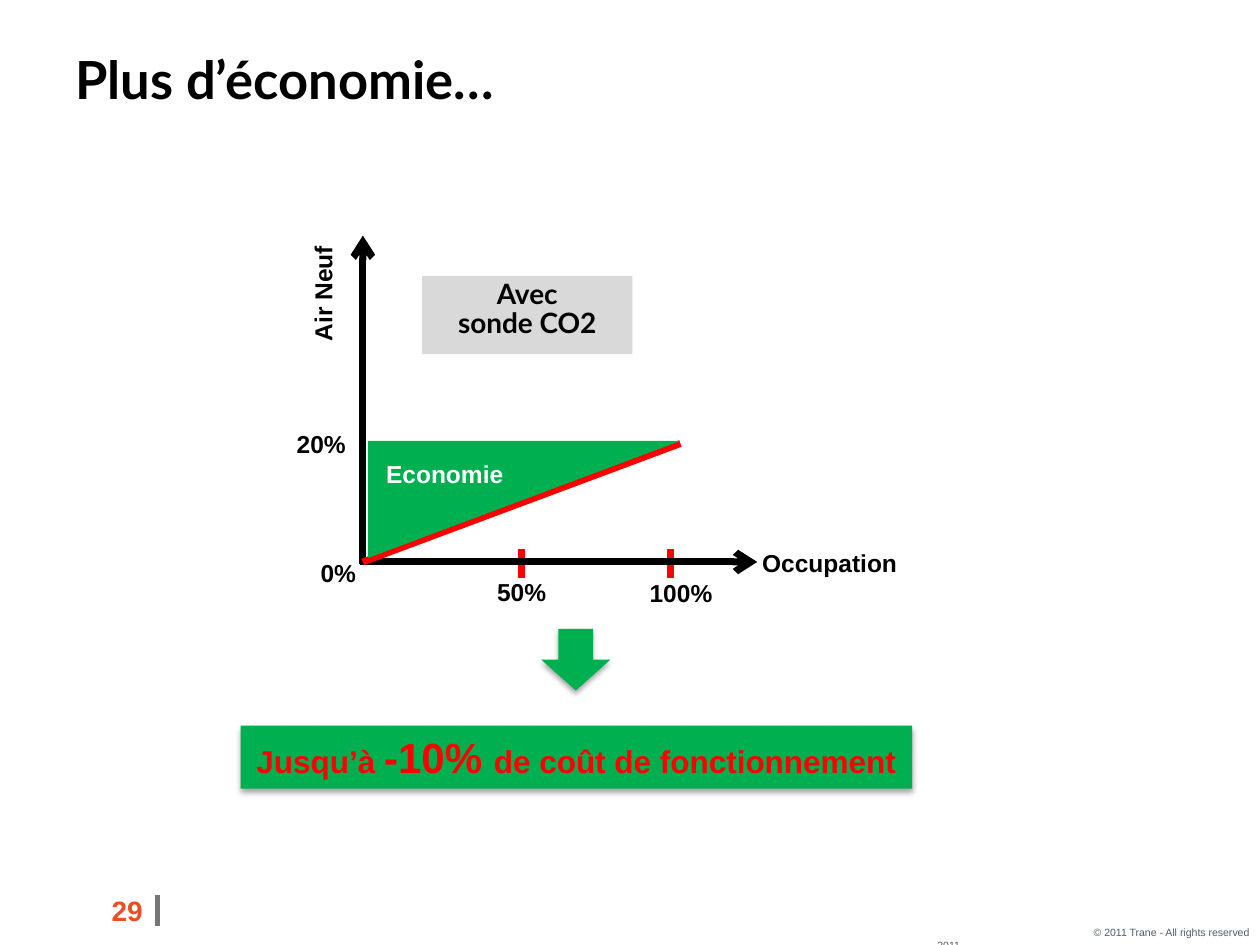
from lxml import etree
from pptx import Presentation, oxml
from pptx import util as u
from pptx.dml import color
from pptx.enum import shapes, text
from pptx.oxml import ns

COLORS = {
    "ink": "000000", "white": "FFFFFF", "green": "00B050", "red": "FF0000",
    "gray": "D9D9D9", "orange": "EF4E23", "bar": "747678", "slate": "4F5C69",
}
LEFT, MID, RIGHT = text.PP_ALIGN.LEFT, text.PP_ALIGN.CENTER, text.PP_ALIGN.RIGHT
SHADOW = (
    f'<a:effectLst {ns.nsdecls("a")}>'
    '<a:outerShdw blurRad="40000" dist="23000" dir="5400000" rotWithShape="0">'
    '<a:srgbClr val="000000"><a:alpha val="35000"/></a:srgbClr>'
    '</a:outerShdw></a:effectLst>'
)


def rgb(name):
    return color.RGBColor.from_string(COLORS[name])


def place(box):
    return [u.Inches(v) for v in box]


def style(font, size, hue, bold=True, face="Arial"):
    font.name, font.size, font.bold = face, u.Pt(size), bold
    font.color.rgb = rgb(hue)


def write(shape, lines, size, hue="ink", align=MID, bold=True, face="Arial",
          gap=None, wrap=True, inset=None):
    frame = shape.text_frame
    frame.word_wrap = wrap
    frame.vertical_anchor = text.MSO_ANCHOR.TOP
    if inset is not None:
        frame.margin_left = frame.margin_right = u.Inches(inset)
        frame.margin_top = frame.margin_bottom = u.Inches(inset)
    for i, line in enumerate(lines):
        para = frame.add_paragraph() if i else frame.paragraphs[0]
        para.text, para.alignment = line, align
        if gap:
            para.line_spacing = gap
        style(para.font, size, hue, bold, face)
    return shape


def label(slide, box, words, size=14, **look):
    return write(slide.shapes.add_textbox(*place(box)), [words], size, **look)


def fill(slide, kind, box, hue, shadow=False):
    shape = slide.shapes.add_shape(kind, *place(box))
    shape.fill.solid()
    shape.fill.fore_color.rgb = rgb(hue)
    shape.line.fill.background()
    shape.shadow.inherit = False
    if shadow:
        props = shape._element.spPr
        props.remove(props.find(ns.qn("a:effectLst")))
        props.append(oxml.parse_xml(SHADOW))
    return shape


def draw(slide, ends, hue, width=4, arrow=False):
    line = slide.shapes.add_connector(shapes.MSO_CONNECTOR.STRAIGHT, *place(ends))
    line.line.color.rgb = rgb(hue)
    line.line.width = u.Pt(width)
    if arrow:
        etree.SubElement(line.line._get_or_add_ln(), ns.qn("a:tailEnd"), type="arrow")
    etree.SubElement(line._element.spPr, ns.qn("a:effectLst"))


def add_title(slide, box):
    label(slide, box, "Plus d’économie…", 30, align=LEFT, face="Lato", gap=0.85)


def add_graph(slide, box):
    x, y, w, h = box
    base = y + h

    # Axes and ticks
    for tick in (2.44, 1.26):
        draw(slide, (x + tick, base - 0.1, x + tick, base + 0.13), "red")
    draw(slide, (x - 0.02, base, x + w, base), "ink", arrow=True)
    draw(slide, (x, base + 0.02, x, y), "ink", arrow=True)

    # Axis names and values
    name = label(slide, (x - 1.1, y + 0.29, 1.57, 0.34), "Air Neuf")
    name.rotation = 270
    for dx, dy, wide, words in (
        (2.92, -0.16, 1.57, "Occupation"),
        (-0.47, -0.08, 0.55, "0%"),
        (0.95, 0.07, 0.62, "50%"),
        (2.13, 0.08, 0.79, "100%"),
        (-0.64, -1.1, 0.62, "20%"),
    ):
        label(slide, (x + dx, base + dy, wide, 0.34), words)

    # Fresh air line and savings area
    draw(slide, (x, base, x + 2.52, base - 0.94), "red")
    area = fill(slide, shapes.MSO_SHAPE.ISOSCELES_TRIANGLE,
                (x + 0.04, base - 0.96, 2.48, 0.93), "green")
    area.adjustments[0] = 0
    area._element.spPr.xfrm.set("flipV", "1")
    label(slide, (x + 0.08, base - 0.87, 1.14, 0.34), "Economie",
          hue="white", wrap=False)

    # Caption
    card = fill(slide, shapes.MSO_SHAPE.RECTANGLE,
                (x + 0.47, y + 0.32, 1.67, 0.62), "gray")
    write(card, ["Avec", "sonde CO2"], 16, face="Lato", gap=0.85)


def add_result(slide, box):
    x, y, w, h = box
    bar = fill(slide, shapes.MSO_SHAPE.RECTANGLE, (x, y + h - 0.5, w, 0.5),
               "green", shadow=True)
    write(bar, [""], 18, hue="red", wrap=False)
    para = bar.text_frame.paragraphs[0]
    for words, size in (("Jusqu’à ", 18), ("-10% ", 24),
                        ("de coût de fonctionnement", 18)):
        run = para.add_run()
        run.text = words
        style(run.font, size, "red")
    fill(slide, shapes.MSO_SHAPE.DOWN_ARROW, (x + w / 2 - 0.28, y, 0.55, 0.49),
         "green", shadow=True)


def add_footer(slide, box):
    x, y, w, h = box
    label(slide, (x, y, 0.77, 0.37), "29", 16, hue="orange", align=RIGHT)
    draw(slide, (x + 0.79, y + 0.06, x + 0.79, y + 0.31), "bar", 3)
    small = {"hue": "slate", "align": LEFT, "bold": False, "wrap": False, "inset": 0}
    label(slide, (x + 8.22, y + 0.31, 1.28, 0.1),
          "© 2011 Trane - All rights reserved", 6, **small)
    label(slide, (x + 6.98, y + 0.41, 0.2, 0.05), "2011", 6, **small)


def main():
    deck = Presentation()
    deck.slide_width, deck.slide_height = u.Inches(10), u.Inches(7.5)
    slide = deck.slides.add_slide(deck.slide_layouts[6])
    add_footer(slide, (0.46, 7.04, 9.54, 0.46))
    add_title(slide, (0.5, 0.4, 7.1, 0.62))
    add_graph(slide, (2.88, 1.87, 3.13, 2.59))
    add_result(slide, (1.91, 4.99, 5.33, 1.27))
    deck.save("out.pptx")


if __name__ == "__main__":
    main()
